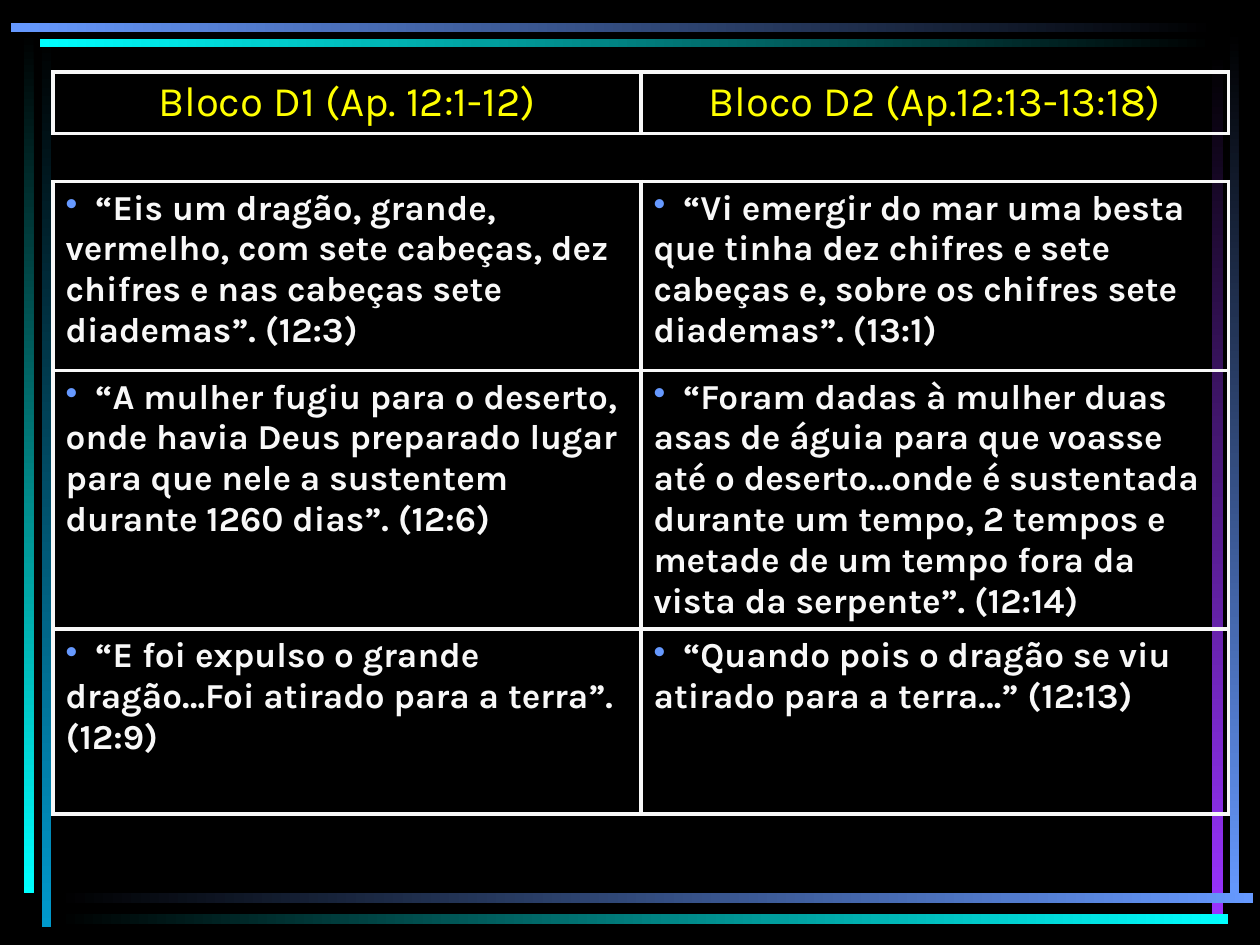
from lxml import etree
from pptx import Presentation
from pptx.dml.color import RGBColor
from pptx.enum import shapes, text
from pptx.oxml.ns import qn
from pptx.util import Cm, Pt

BLACK = RGBColor(0x00, 0x00, 0x00)
WHITE = RGBColor(0xF8, 0xF8, 0xF8)
YELLOW = RGBColor(0xFF, 0xFF, 0x00)
BLUE = RGBColor(0x66, 0x99, 0xFF)
SEA = RGBColor(0x00, 0x99, 0xCC)
CYAN = RGBColor(0x00, 0xFF, 0xFF)
PURPLE = RGBColor(0x99, 0x33, 0xFF)

FONT = "Karla"
TABLE_LEFT, COLUMN_WIDTH = 1.07, 11.85
RIGHTWARD, DOWNWARD = 0, 270

# left, top, width, height, start colour, end colour, direction
BARS = [
    (0.84, 0.71, 0.2, 17.98, BLACK, SEA, DOWNWARD),
    (0.48, 0.64, 0.2, 17.37, BLACK, CYAN, DOWNWARD),
    (24.79, 0.61, 0.18, 17.6, BLACK, BLUE, DOWNWARD),
    (24.43, 1.07, 0.23, 17.35, BLACK, PURPLE, DOWNWARD),
    (1.14, 18, 24.13, 0.2, BLACK, BLUE, RIGHTWARD),
    (1.14, 18.42, 23.62, 0.2, BLACK, CYAN, RIGHTWARD),
    (0.81, 0.79, 23.67, 0.15, CYAN, BLACK, RIGHTWARD),
    (0.22, 0.47, 24.28, 0.18, BLUE, BLACK, RIGHTWARD),
]

HEADINGS = [("Bloco D1 (Ap. 12:1-12)", "Bloco D2 (Ap.12:13-13:18)")]
PARALLELS = [
    ("“Eis um dragão, grande, vermelho, com sete cabeças, dez chifres "
     "e nas cabeças sete diademas”. (12:3)",
     "“Vi emergir do mar uma besta que tinha dez chifres e sete cabeças e, "
     "sobre os chifres sete diademas”. (13:1)"),
    ("“A mulher fugiu para o deserto, onde havia Deus preparado lugar "
     "para que nele a sustentem durante 1260 dias”. (12:6)",
     "“Foram dadas à mulher duas asas de águia para que voasse até o "
     "deserto…onde é sustentada durante um tempo, 2 tempos e metade de um "
     "tempo fora da vista da serpente”. (12:14)"),
    ("“E foi expulso o grande dragão…Foi atirado para a terra”. (12:9)",
     "“Quando pois o dragão se viu atirado para a terra…” (12:13)"),
]


def add_bar(slide, left, top, width, height, start, end, direction):
    bar = slide.shapes.add_shape(shapes.MSO_SHAPE.RECTANGLE,
                                 Cm(left), Cm(top), Cm(width), Cm(height))
    bar.shadow.inherit = False
    bar.line.fill.background()
    bar.fill.gradient()
    bar.fill.gradient_angle = direction
    for stop, color in zip(bar.fill.gradient_stops, (start, end)):
        stop.color.rgb = color


def add_bullet(paragraph, color):
    """Bullet with a tab stop after it; further lines start at the margin."""
    props = paragraph._p.get_or_add_pPr()
    props.set("marL", "0")
    props.set("indent", "0")
    bullet_color = etree.SubElement(props, qn("a:buClr"))
    etree.SubElement(bullet_color, qn("a:srgbClr"), val=str(color))
    etree.SubElement(props, qn("a:buChar"), char="•")
    tabs = etree.SubElement(props, qn("a:tabLst"))
    etree.SubElement(tabs, qn("a:tab"), pos=str(Cm(0.6)), algn="l")


def write(frame, words, size, color, bold=False, align=None, bullet=None):
    paragraph = frame.paragraphs[0]
    paragraph.space_before = Pt(size * 0.2)
    if align is not None:
        paragraph.alignment = align
    if bullet is not None:
        add_bullet(paragraph, bullet)
        words = "\t" + words
    run = paragraph.add_run()
    run.text = words
    run.font.name = FONT
    run.font.size = Pt(size)
    run.font.bold = bold
    run.font.color.rgb = color


def add_borders(cell, color, width):
    props = cell._tc.get_or_add_tcPr()
    for side in ("lnL", "lnR", "lnT", "lnB"):
        line = etree.SubElement(props, qn(f"a:{side}"), w=str(Pt(width)))
        fill = etree.SubElement(line, qn("a:solidFill"))
        etree.SubElement(fill, qn("a:srgbClr"), val=str(color))


def add_grid(slide, top, row_heights, rows, **text_format):
    table = slide.shapes.add_table(
        len(rows), 2, Cm(TABLE_LEFT), Cm(top),
        Cm(2 * COLUMN_WIDTH), Cm(sum(row_heights))).table
    table.first_row = False
    table.horz_banding = False
    for column in table.columns:
        column.width = Cm(COLUMN_WIDTH)
    for row, height, passages in zip(table.rows, row_heights, rows):
        row.height = Cm(height)
        for cell, passage in zip(row.cells, passages):
            add_borders(cell, WHITE, 2.25)
            cell.fill.background()
            write(cell.text_frame, passage, **text_format)


def main():
    prs = Presentation()
    prs.slide_width, prs.slide_height = Cm(25.4), Cm(19.05)
    slide = prs.slides.add_slide(prs.slide_layouts[6])
    slide.background.fill.solid()
    slide.background.fill.fore_color.rgb = BLACK

    for bar in BARS:
        add_bar(slide, *bar)
    add_grid(slide, 3.66, (3.81, 3.73, 3.73), PARALLELS,
             size=20, color=WHITE, bold=True, bullet=BLUE)
    add_grid(slide, 1.45, (1.24,), HEADINGS,
             size=24, color=YELLOW, align=text.PP_ALIGN.CENTER)
    prs.save("out.pptx")


if __name__ == "__main__":
    main()
